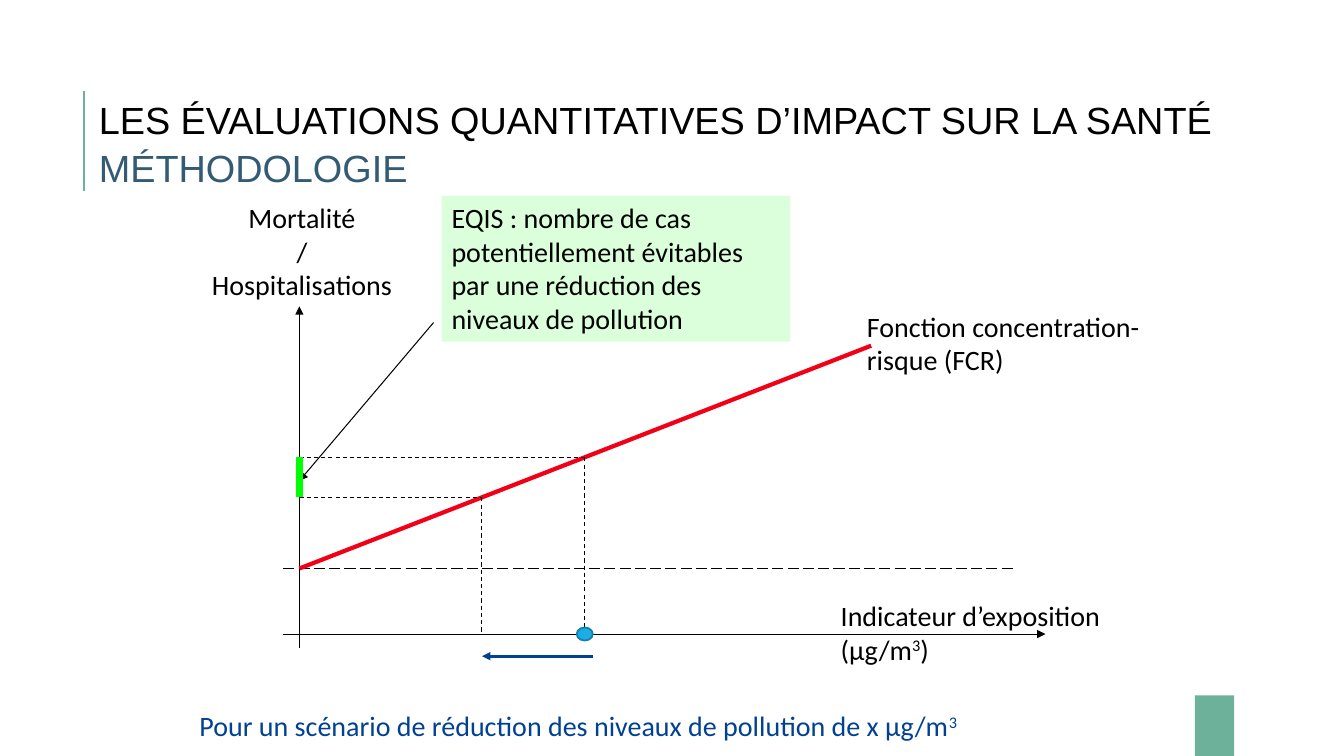
import pptx
import pptx.dml.color
import pptx.enum.dml
import pptx.enum.shapes
import pptx.enum.text
import pptx.oxml
import pptx.oxml.ns
import pptx.util

SHAPE = pptx.enum.shapes.MSO_SHAPE
DASH = pptx.enum.dml.MSO_LINE
ALIGN = pptx.enum.text.PP_ALIGN
AUTO_SIZE = pptx.enum.text.MSO_AUTO_SIZE
BLACK, TEAL, BLUE, RED, GREEN = "000000", "6DB19A", "004192", "F20017", "00FF00"


def colour(hex_text):
    return pptx.dml.color.RGBColor.from_string(hex_text)


def xml_node(tag, **attributes):
    node = pptx.oxml.parse_xml(f"<a:{tag} {pptx.oxml.ns.nsdecls('a')}/>")
    for key, value in attributes.items():
        node.set(key, value)
    return node


class Diagram:
    """Positions and sizes are percentages of the slide's width and height."""

    body_font, body_size = "Calibri", 20
    title_font, title_size = "Arial", 27

    def __init__(self, deck):
        self.deck = deck
        self.slide = deck.slides.add_slide(deck.slide_layouts[5])

    def x(self, share):
        return round(self.deck.slide_width * share / 100)

    def y(self, share):
        return round(self.deck.slide_height * share / 100)

    def box(self, left, top, width, height):
        return self.x(left), self.y(top), self.x(width), self.y(height)

    def title(self, area, lines):
        heading = self.slide.shapes.title
        heading.left, heading.top, heading.width, heading.height = self.box(*area)
        frame = heading.text_frame
        frame.auto_size = AUTO_SIZE.NONE
        frame.margin_right = 0
        frame.vertical_anchor = pptx.enum.text.MSO_ANCHOR.MIDDLE
        paragraph = frame.paragraphs[0]
        paragraph.alignment = ALIGN.LEFT
        paragraph.line_spacing = 1.06
        paragraph.font.name = self.title_font
        paragraph.font.size = pptx.util.Pt(self.title_size)
        for index, (words, ink) in enumerate(lines):
            if index:
                paragraph.add_line_break()
            run = paragraph.add_run()
            run.text = words
            run.font.color.rgb = colour(ink)

    def line(self, start, end, ink=BLACK, weight=0.75, dash=None, arrow=False):
        stroke = self.slide.shapes.add_connector(
            pptx.enum.shapes.MSO_CONNECTOR.STRAIGHT,
            self.x(start[0]), self.y(start[1]), self.x(end[0]), self.y(end[1]))
        stroke.line.color.rgb = colour(ink)
        stroke.line.width = pptx.util.Pt(weight)
        if dash:
            stroke.line.dash_style = dash
        if arrow:
            stroke.line._get_or_add_ln().append(xml_node("tailEnd", type="triangle"))
        stroke._element.spPr.append(xml_node("effectLst"))

    def shape(self, kind, area, fill, outline=None, opacity=None):
        figure = self.slide.shapes.add_shape(kind, *self.box(*area))
        figure.shadow.inherit = False
        figure.fill.solid()
        figure.fill.fore_color.rgb = colour(fill)
        if opacity:
            tint = figure._element.spPr.find(".//" + pptx.oxml.ns.qn("a:srgbClr"))
            tint.append(xml_node("alpha", val=str(opacity * 1000)))
        if outline:
            figure.line.color.rgb = colour(outline)
            figure.line.width = pptx.util.Pt(1.25)
        else:
            figure.line.fill.background()
        return figure

    def label(self, area, paragraphs, ink=BLACK, align=ALIGN.LEFT):
        self.fill_text(self.slide.shapes.add_textbox(*self.box(*area)), paragraphs, ink, align)

    def fill_text(self, holder, paragraphs, ink=BLACK, align=ALIGN.LEFT):
        frame = holder.text_frame
        frame.word_wrap = True
        frame.auto_size = AUTO_SIZE.SHAPE_TO_FIT_TEXT
        frame.vertical_anchor = pptx.enum.text.MSO_ANCHOR.TOP
        for index, words in enumerate(paragraphs):
            paragraph = frame.add_paragraph() if index else frame.paragraphs[0]
            paragraph.alignment = align
            paragraph.font.name = self.body_font
            paragraph.font.size = pptx.util.Pt(self.body_size)
            paragraph.font.color.rgb = colour(ink)
            for position, piece in enumerate(words.split("^")):
                run = paragraph.add_run()
                run.text = piece
                if position == 1:
                    run._r.get_or_add_rPr().set("baseline", "30000")


def main():
    deck = pptx.Presentation()
    deck.slide_width = pptx.util.Inches(13.33)
    deck.slide_height = pptx.util.Inches(7.5)
    diagram = Diagram(deck)

    origin_x, axis_y, axis_start = 22.28, 83.87, 21.08
    base_risk, risk_end = 75.2, (64.82, 45.73)
    reduced, current = 35.86, 43.51
    slope = (risk_end[1] - base_risk) / (risk_end[0] - origin_x)
    risk = {level: base_risk + slope * (level - origin_x) for level in (reduced, current)}

    diagram.shape(SHAPE.RECTANGLE, (88.9, 92, 2.93, 8), TEAL)
    diagram.line((6.23, 25.33), (6.23, 12), TEAL, 1.5)
    diagram.title((6.6, 12, 84.47, 13.47), [
        ("LES ÉVALUATIONS QUANTITATIVES D’IMPACT SUR LA SANTÉ", BLACK),
        ("MÉTHODOLOGIE", "335B74")])

    diagram.line((origin_x, 85.73), (origin_x, 40.53), arrow=True)
    diagram.line((axis_start, base_risk), (75.39, base_risk), weight=1, dash=DASH.LONG_DASH)
    diagram.line((origin_x, base_risk), risk_end, RED, 3)
    for level, height in risk.items():
        diagram.line((origin_x, height), (level, height), dash=DASH.DASH)
        diagram.line((level, height), (level, 83.6), dash=DASH.DASH)

    callout = diagram.shape(SHAPE.RECTANGLE, (32.86, 25.87, 25.96, 19.33), "CCFFCC", opacity=72)
    diagram.fill_text(callout, ["EQIS : nombre de cas potentiellement évitables "
                                "par une réduction des niveaux de pollution"])
    diagram.line((32.26, 42.67), (origin_x, 63.6), arrow=True)
    diagram.line((origin_x, risk[current]), (origin_x, risk[reduced]), GREEN, 4.5)

    diagram.line((44.11, 86.8), (reduced, 86.8), BLUE, 2, arrow=True)
    diagram.label((14.1, 93.07, 70.89, 5.87),
                  ["Pour un scénario de réduction des niveaux de pollution de x µg/m^3"], BLUE)
    diagram.label((61.82, 78.53, 24.23, 10.27), ["Indicateur d’exposition (µg/m^3^)"])
    diagram.label((14.4, 25.87, 16.13, 14.8), ["Mortalité", "/", "Hospitalisations"],
                  align=ALIGN.CENTER)
    diagram.label((63.77, 40.27, 24.23, 10.27), ["Fonction concentration-risque (FCR)"])

    diagram.line((axis_start, axis_y), (77.79, axis_y), arrow=True)
    dot_width, dot_height = 1.2, 1.73
    diagram.shape(SHAPE.FLOWCHART_CONNECTOR,
                  (current - dot_width / 2, axis_y - dot_height / 2, dot_width, dot_height),
                  "1CADE4", "1580A9")
    deck.save("out.pptx")


if __name__ == "__main__":
    main()
